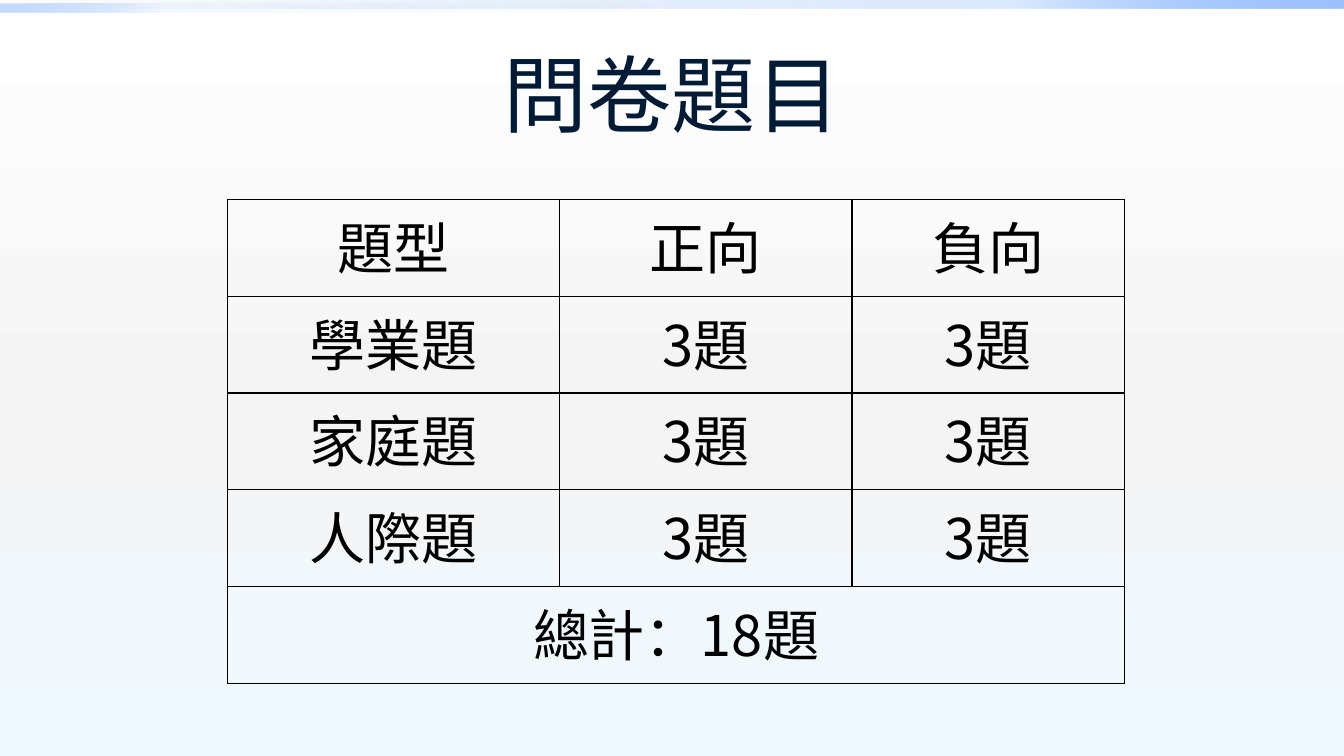
"""Build the slide that counts the questionnaire items by type."""
from lxml import etree
from pptx import Presentation
from pptx.dml.color import RGBColor
from pptx.enum.shapes import MSO_SHAPE
from pptx.enum.text import MSO_ANCHOR, MSO_AUTO_SIZE, PP_ALIGN
from pptx.oxml.ns import qn
from pptx.util import Inches, Pt

RECT = MSO_SHAPE.RECTANGLE
CENTER = PP_ALIGN.CENTER
MIDDLE = MSO_ANCHOR.MIDDLE
FIXED = MSO_AUTO_SIZE.NONE

TITLE = "問卷題目"
KINDS = ["學業題", "家庭題", "人際題"]
ROWS = [["題型", "正向", "負向"]] + [[kind, "3題", "3題"] for kind in KINDS]
TOTAL = "總計：18題"

THEME = {
    "font": "Noto Sans CJK SC",
    "title": (60, "001B36"),
    "cell": (40, "000000"),
    "line": (1, "000000"),
    "back": (90, [(0, "FFFFFF", 100), (55, "F4F4F4", 100), (100, "EEF9FF", 100)]),
    "top": (315, [(0, "0058B7", 0), (75, "4F95FF", 20), (100, "9EC2FF", 100)]),
    "left": (135, [(0, "0058B7", 0), (75, "4F95FF", 5), (100, "9EC2FF", 60)]),
}

WIDE, HIGH = 13.33, 7.5
BAR = 0.08
BARS = [("top", 0, 0, WIDE), ("left", 0, BAR / 2, WIDE / 2)]
HEAD = (0.05 * WIDE, 0.04 * HIGH, 0.9 * WIDE, HIGH / 6)
COLS = [3.29, 2.9, 2.7]
ROW = 0.96
LEFT, TOP = 2.26, 1.98


def add(parent, tag, **attrs):
    """Append one drawing element to a parent."""
    node = etree.SubElement(parent, qn(tag))
    for key, value in attrs.items():
        node.set(key, str(value))
    return node


def shade(fill, name):
    """Give a fill the named gradient."""
    angle, stops = THEME[name]
    fill.gradient()
    grad = fill._fill._gradFill
    for child in list(grad):
        grad.remove(child)
    group = add(grad, "a:gsLst")
    for pos, color, alpha in stops:
        stop = add(group, "a:gs", pos=pos * 1000)
        tint = add(stop, "a:srgbClr", val=color)
        if alpha < 100:
            add(tint, "a:alpha", val=alpha * 1000)
    add(grad, "a:lin", ang=angle * 60000, scaled=0)


def write(frame, text, style):
    """Write one centred run in the named style."""
    size, color = THEME[style]
    para = frame.paragraphs[0]
    para.alignment = CENTER
    run = para.add_run()
    run.text = text
    run.font.size = Pt(size)
    run.font.color.rgb = RGBColor.from_string(color)
    run.font.name = THEME["font"]
    add(run.font._element, "a:ea", typeface=THEME["font"])


def frame_cell(cell):
    """Draw the four borders of a clear cell."""
    width, color = THEME["line"]
    props = cell._tc.get_or_add_tcPr()
    for side in "LRTB":
        line = add(props, f"a:ln{side}", w=Pt(width))
        add(add(line, "a:solidFill"), "a:srgbClr", val=color)
    cell.fill.background()


def add_grid(slide):
    """Add the table of counts with its merged total row."""
    count = len(ROWS) + 1
    box = [Inches(v) for v in (LEFT, TOP, sum(COLS), count * ROW)]
    table = slide.shapes.add_table(count, len(COLS), *box).table
    table.first_row = table.horz_banding = False
    for col, width in zip(table.columns, COLS):
        col.width = Inches(width)
    for row in table.rows:
        row.height = Inches(ROW)
    for cell in table.iter_cells():
        frame_cell(cell)
    for r, row in enumerate(ROWS):
        for c, text in enumerate(row):
            write(table.cell(r, c).text_frame, text, "cell")
    last = table.cell(count - 1, 0)
    last.merge(table.cell(count - 1, len(COLS) - 1))
    write(last.text_frame, TOTAL, "cell")


def main():
    """Build and save the slide."""
    deck = Presentation()
    deck.slide_width, deck.slide_height = Inches(WIDE), Inches(HIGH)
    slide = deck.slides.add_slide(deck.slide_layouts[5])
    shade(slide.background.fill, "back")
    for name, x, y, width in BARS:
        box = [Inches(v) for v in (x, y, width, BAR)]
        bar = slide.shapes.add_shape(RECT, *box)
        bar.shadow.inherit = False
        bar.line.fill.background()
        shade(bar.fill, name)
    title = slide.shapes.title
    title.left, title.top, title.width, title.height = [Inches(v) for v in HEAD]
    title.text_frame.auto_size = FIXED
    title.text_frame.vertical_anchor = MIDDLE
    write(title.text_frame, TITLE, "title")
    add_grid(slide)
    deck.save("out.pptx")


if __name__ == "__main__":
    main()
